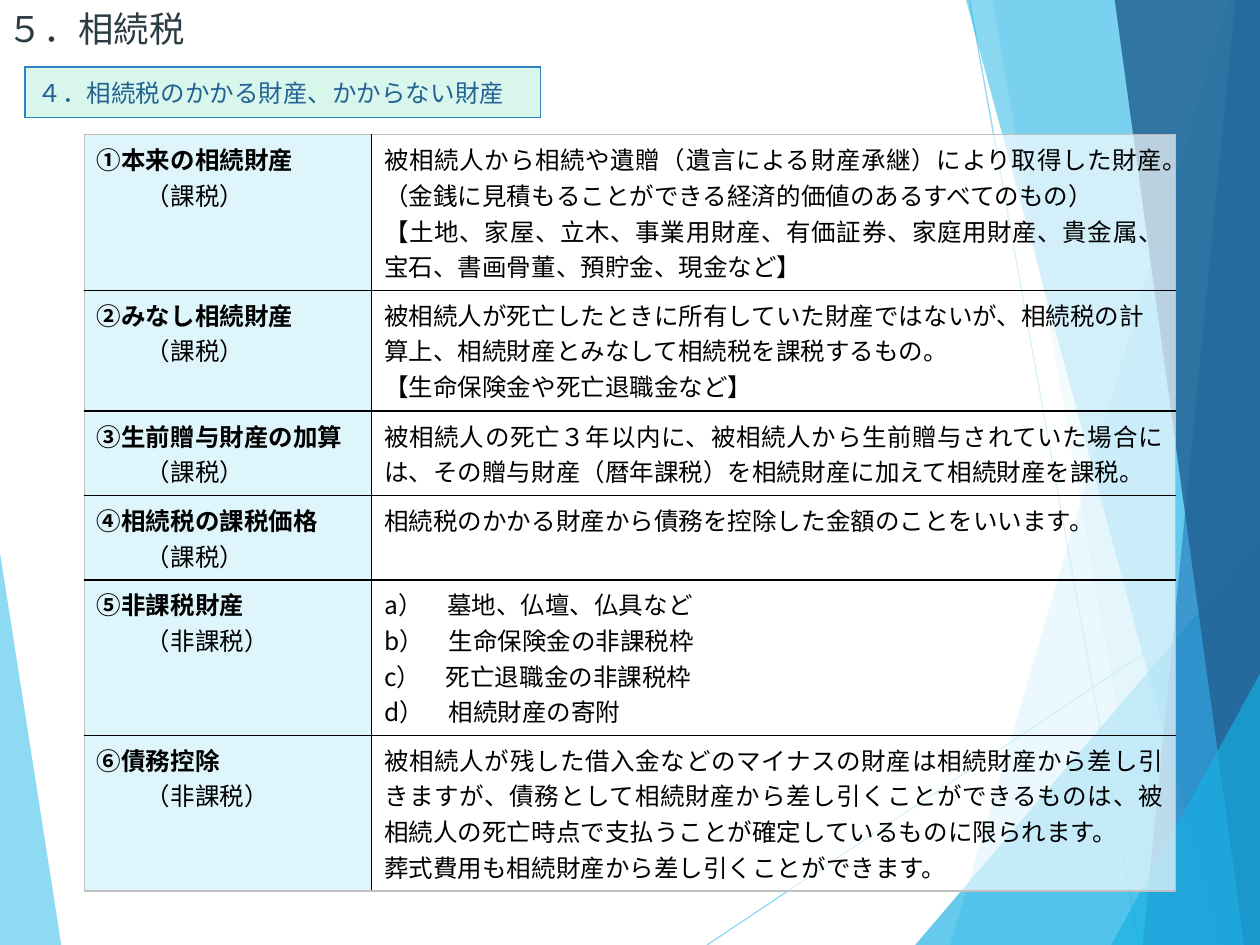
import pptx
import pptx.dml.color
import pptx.enum.shapes
import pptx.enum.text
import pptx.oxml
import pptx.oxml.ns
import pptx.util

Pt = pptx.util.Pt
qn = pptx.oxml.ns.qn
ALIGN = pptx.enum.text.PP_ALIGN
ANCHOR = pptx.enum.text.MSO_ANCHOR
FONT = "Noto Sans CJK JP"
W, H = 720, 540

COLORS = {
    "sky": "5FCBEF", "cyan": "17B0E4", "blue": "2E83C3", "navy": "226292",
    "title": "2C3C43", "mint": "D9F6EC", "pale": "DFF5FC",
    "white": "FFFFFF", "black": "000000", "grey": "BFBFBF",
}

# Corner points, colour and opacity in percent, from back to front
FACETS = [
    ([(0, 316), (35, H), (0, H)], "sky", 70),
    ([(702, 0), (543, H), (W, H), (W, 0)], "sky", 36),
    ([(567, 0), (662, H), (W, H), (W, 0)], "sky", 20),
    ([(523, H), (W, 309), (W, H)], "cyan", 66),
    ([(552, 0), (698, H), (W, H), (W, 0)], "cyan", 50),
    ([(706, 0), (653, H), (W, H), (W, 0)], "blue", 70),
    ([(637, 0), (711, H), (W, H), (W, 0)], "navy", 82),
    ([(635, H), (W, 385), (W, H)], "cyan", 66),
]
RAYS = [(404, H, W, 329), (554, 0, 651, H)]

# Heading, tax status, row height, alignment, explanation
ROWS = [
    ("①本来の相続財産", "（課税）", 80.6, ALIGN.JUSTIFY, [
        "被相続人から相続や遺贈（遺言による財産承継）により取得した財産。"
        "（金銭に見積もることができる経済的価値のあるすべてのもの）",
        "【土地、家屋、立木、事業用財産、有価証券、家庭用財産、貴金属、"
        "宝石、書画骨董、預貯金、現金など】"]),
    ("②みなし相続財産", "（課税）", 69.1, ALIGN.LEFT, [
        "被相続人が死亡したときに所有していた財産ではないが、相続税の計"
        "算上、相続財産とみなして相続税を課税するもの。",
        "【生命保険金や死亡退職金など】"]),
    ("③生前贈与財産の加算", "（課税）", 48.2, ALIGN.JUSTIFY, [
        "被相続人の死亡３年以内に、被相続人から生前贈与されていた場合に"
        "は、その贈与財産（暦年課税）を相続財産に加えて相続財産を課税。"]),
    ("④相続税の課税価格", "（課税）", 48.2, ALIGN.JUSTIFY, [
        "相続税のかかる財産から債務を控除した金額のことをいいます。"]),
    ("⑤非課税財産", "（非課税）", 80.6, ALIGN.JUSTIFY, [
        "a）　墓地、仏壇、仏具など",
        "b）　生命保険金の非課税枠",
        "c）　死亡退職金の非課税枠",
        "d）　相続財産の寄附"]),
    ("⑥債務控除", "（非課税）", 80.6, ALIGN.JUSTIFY, [
        "被相続人が残した借入金などのマイナスの財産は相続財産から差し引"
        "きますが、債務として相続財産から差し引くことができるものは、被"
        "相続人の死亡時点で支払うことが確定しているものに限られます。",
        "葬式費用も相続財産から差し引くことができます。"]),
]


def rgb(name):
    return pptx.dml.color.RGBColor.from_string(COLORS[name])


def set_alpha(parent, percent):
    for clr in parent.iter(qn("a:srgbClr")):
        pptx.oxml.ns  # colour element takes the opacity as a child
        alpha = clr.makeelement(qn("a:alpha"), {"val": str(percent * 1000)})
        clr.append(alpha)


def write(p, text, size=14, color="black", bold=False, align=ALIGN.LEFT, indent=0):
    """Fill a paragraph with one formatted run."""
    p.alignment = align
    if indent:
        p._p.get_or_add_pPr().set("marL", str(Pt(indent)))
    r = p.add_run()
    r.text = text
    r.font.size, r.font.bold = Pt(size), bold
    r.font.color.rgb = rgb(color)
    r.font.name = FONT
    rPr = r._r.get_or_add_rPr()
    rPr.append(rPr.makeelement(qn("a:ea"), {"typeface": FONT}))


def next_paragraph(tf):
    """Return the empty first paragraph, or a new one."""
    first = tf.paragraphs[0]
    return tf.add_paragraph() if first.runs else first


def add_facet(s, points, color, opacity):
    builder = s.shapes.build_freeform(*points[0], scale=Pt(1))
    builder.add_line_segments(points[1:], close=True)
    sp = builder.convert_to_shape()
    sp.shadow.inherit = False
    sp.fill.solid()
    sp.fill.fore_color.rgb = rgb(color)
    sp.line.fill.background()
    set_alpha(sp._element.spPr, opacity)


def add_ray(s, *ends):
    line = s.shapes.add_connector(
        pptx.enum.shapes.MSO_CONNECTOR.STRAIGHT, *map(Pt, ends))
    line.line.width = Pt(0.75)
    line.line.color.rgb = rgb("sky")
    spPr = line._element.spPr
    set_alpha(spPr, 70)
    spPr.append(spPr.makeelement(qn("a:effectLst"), {}))


def add_table(s, left, top, widths, heights):
    table = s.shapes.add_table(len(heights), len(widths), Pt(left), Pt(top),
                               Pt(sum(widths)), Pt(sum(heights))).table
    table.first_row = table.horz_banding = False
    for col, width in zip(table.columns, widths):
        col.width = Pt(width)
    for row, height in zip(table.rows, heights):
        row.height = Pt(height)
    return table


def style_cell(cell, fill, borders, opacity=100):
    """Set the fill and the border colours, given as left, right, top, bottom."""
    tcPr = cell._tc.get_or_add_tcPr()
    for side, color in zip("LRTB", borders):
        ln = tcPr.makeelement(qn("a:ln" + side), {"w": str(Pt(1))})
        solid = ln.makeelement(qn("a:solidFill"), {})
        solid.append(ln.makeelement(qn("a:srgbClr"), {"val": COLORS[color]}))
        ln.append(solid)
        tcPr.append(ln)
    cell.fill.solid()
    cell.fill.fore_color.rgb = rgb(fill)
    if opacity < 100:
        set_alpha(tcPr.find(qn("a:solidFill")), opacity)


def add_title(s, text):
    title = s.shapes.title
    title.left, title.top, title.width, title.height = Pt(0), Pt(0), Pt(288), Pt(32.4)
    tf = title.text_frame
    tf.auto_size = pptx.enum.text.MSO_AUTO_SIZE.NONE
    tf.vertical_anchor = ANCHOR.MIDDLE
    tf.margin_left = Pt(4.5)
    tf.margin_right = tf.margin_top = tf.margin_bottom = 0
    write(tf.paragraphs[0], text, size=20.2, color="title")


def add_subtitle(s, text):
    cell = add_table(s, 14.4, 38.2, [294.5], [28.8]).cell(0, 0)
    cell.vertical_anchor = ANCHOR.MIDDLE
    style_cell(cell, "mint", ["blue"] * 4)
    write(cell.text_frame.paragraphs[0], text, color="navy")


def add_asset_table(s):
    table = add_table(s, 48.2, 77, [164.2, 459.4], [row[2] for row in ROWS])
    for i, (heading, status, _, align, lines) in enumerate(ROWS):
        top = "black" if i else "grey"
        bottom = "black" if i < len(ROWS) - 1 else "grey"
        name, detail = table.cell(i, 0), table.cell(i, 1)
        style_cell(name, "pale", ["grey", "black", top, bottom])
        style_cell(detail, "white", ["black", "grey", top, bottom], opacity=67)
        write(next_paragraph(name.text_frame), heading, bold=True)
        write(next_paragraph(name.text_frame), status, indent=28)
        for text in lines:
            write(next_paragraph(detail.text_frame), text, align=align)


def main():
    prs = pptx.Presentation()
    prs.slide_width, prs.slide_height = Pt(W), Pt(H)
    s = prs.slides.add_slide(prs.slide_layouts[5])
    add_facet(s, *FACETS[0])
    for ray in RAYS:
        add_ray(s, *ray)
    for facet in FACETS[1:]:
        add_facet(s, *facet)
    add_title(s, "５．相続税")
    add_subtitle(s, "４．相続税のかかる財産、かからない財産")
    add_asset_table(s)
    prs.save("out.pptx")


if __name__ == "__main__":
    main()
